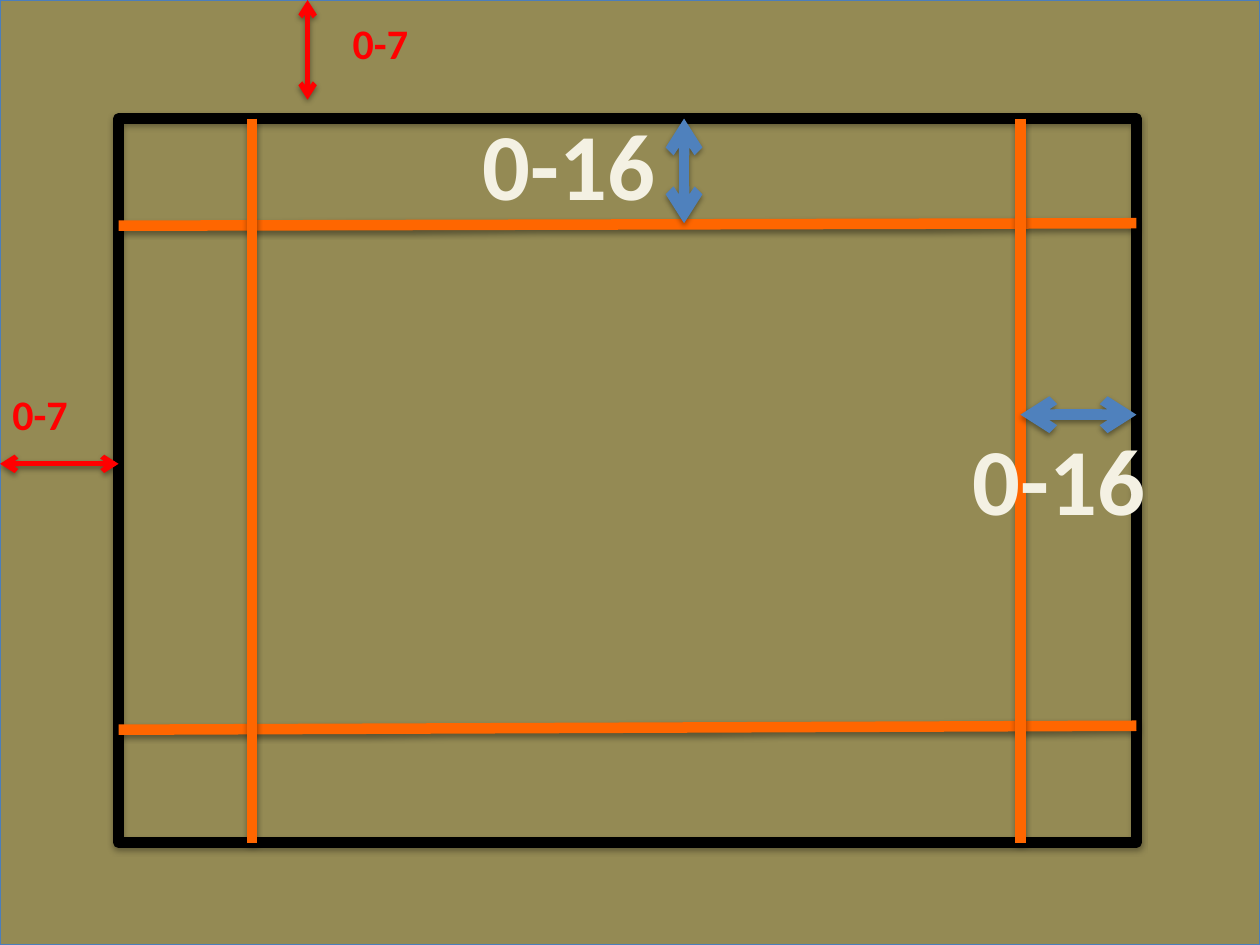
from lxml import etree
from pptx import Presentation
from pptx.dml.color import RGBColor as RGB
from pptx.enum.shapes import MSO_CONNECTOR as LINE, MSO_SHAPE as SHAPE
from pptx.enum.text import MSO_AUTO_SIZE as FIT, PP_ALIGN as ALIGN
from pptx.oxml import parse_xml
from pptx.oxml.ns import nsdecls, qn
from pptx.util import Cm, Pt

HUES = {
    "ground": "948A54", "edge": "4B7EBC", "frame": "000000", "guide": "FF6600",
    "inner": "4F81BD", "outer": "FF0000", "cream": "F4F1E3", "rim": "054697",
}
WIDE, HIGH = 25.4, 19.05
FRAME = (2.39, 2.39, 20.52, 14.6)  # left, top, width, height in cm


def hue(name):
    return RGB.from_string(HUES[name])


def stroke(line, name, width):
    line.color.rgb = hue(name)
    line.width = Pt(width)


def shade(shape, dist, alpha):
    """Give the shape a soft shadow straight below it."""
    props = shape._element.spPr
    for old in props.findall(qn("a:effectLst")):
        props.remove(old)
    props.append(parse_xml(
        f'<a:effectLst {nsdecls("a")}><a:outerShdw blurRad="{Pt(3.15)}" '
        f'dist="{Pt(dist)}" dir="5400000" rotWithShape="0">'
        f'<a:srgbClr val="000000"><a:alpha val="{alpha * 1000}"/></a:srgbClr>'
        '</a:outerShdw></a:effectLst>'))


def add_box(slide, box, edge, width, fill=None):
    rect = slide.shapes.add_shape(SHAPE.RECTANGLE, *map(Cm, box))
    if fill:
        rect.fill.solid()
        rect.fill.fore_color.rgb = hue(fill)
    else:
        rect.fill.background()
    stroke(rect.line, edge, width)
    shade(rect, 1.8, 35)


def add_line(slide, ends, name, width, arrow=False):
    line = slide.shapes.add_connector(LINE.STRAIGHT, *map(Cm, ends))
    stroke(line.line, name, width)
    if arrow:
        ln = line.line._get_or_add_ln()
        for tip in ("a:headEnd", "a:tailEnd"):
            etree.SubElement(ln, qn(tip), type="arrow")
    shade(line, 1.6, 38)


def add_text(slide, box, text, size, name, rim=None):
    frame = slide.shapes.add_textbox(*map(Cm, box)).text_frame
    frame.word_wrap = not rim
    frame.auto_size = FIT.SHAPE_TO_FIT_TEXT
    para = frame.paragraphs[0]
    para.alignment = ALIGN.CENTER if rim else ALIGN.LEFT
    run = para.add_run()
    run.text = text
    form = {"name": "Calibri", "size": Pt(size), "bold": True}
    for key, value in form.items():
        setattr(run.font, key, value)
    run.font.color.rgb = hue(name)
    if rim:
        run._r.get_or_add_rPr().insert(0, parse_xml(
            f'<a:ln {nsdecls("a")} w="{Pt(1)}"><a:solidFill>'
            f'<a:srgbClr val="{HUES[rim]}"/></a:solidFill></a:ln>'))


def draw_frame(slide, box):
    """Black frame crossed by two upright and two slightly tilted guides."""
    x, y, w, h = box
    add_box(slide, box, "frame", 6)
    for start, end in ((2.16, 2.11), (12.32, 12.24)):
        add_line(slide, (x, y + start, x + w, y + end), "guide", 6)
    for dx in (18.18, 2.69):
        add_line(slide, (x + dx, y, x + dx, y + h), "guide", 6)


def draw_inner(slide, box):
    """Gaps between the frame and its guides."""
    x, y, w, h = box
    for dx, dy in ((7.06, -0.38), (16.94, 5.97)):
        add_text(slide, (x + dx, y + dy, 4.04, 2.57), "0-16", 54, "cream", "rim")
    for ends in ((x + 11.4, y, x + 11.4, y + 2.11),
                 (x + w, y + 5.97, x + 18.18, y + 5.97)):
        add_line(slide, ends, "inner", 6, arrow=True)


def draw_outer(slide, box):
    """Gaps between the slide edge and the frame."""
    x, y, w, h = box
    for ends in ((6.2, 0, 6.2, y - 0.38), (x, 9.35, 0, 9.35)):
        add_line(slide, ends, "outer", 3, arrow=True)
    for spot in ((6.86, 0.23, 2.18, 1.27), (0, 7.7, x, 1.27)):
        add_text(slide, spot, "0-7", 24, "outer")


def main():
    deck = Presentation()
    deck.slide_width, deck.slide_height = Cm(WIDE), Cm(HIGH)
    slide = deck.slides.add_slide(deck.slide_layouts[6])
    add_box(slide, (0, 0, WIDE, HIGH), "edge", 0.75, "ground")
    for draw in (draw_frame, draw_inner, draw_outer):
        draw(slide, FRAME)
    deck.save("out.pptx")


if __name__ == "__main__":
    main()
